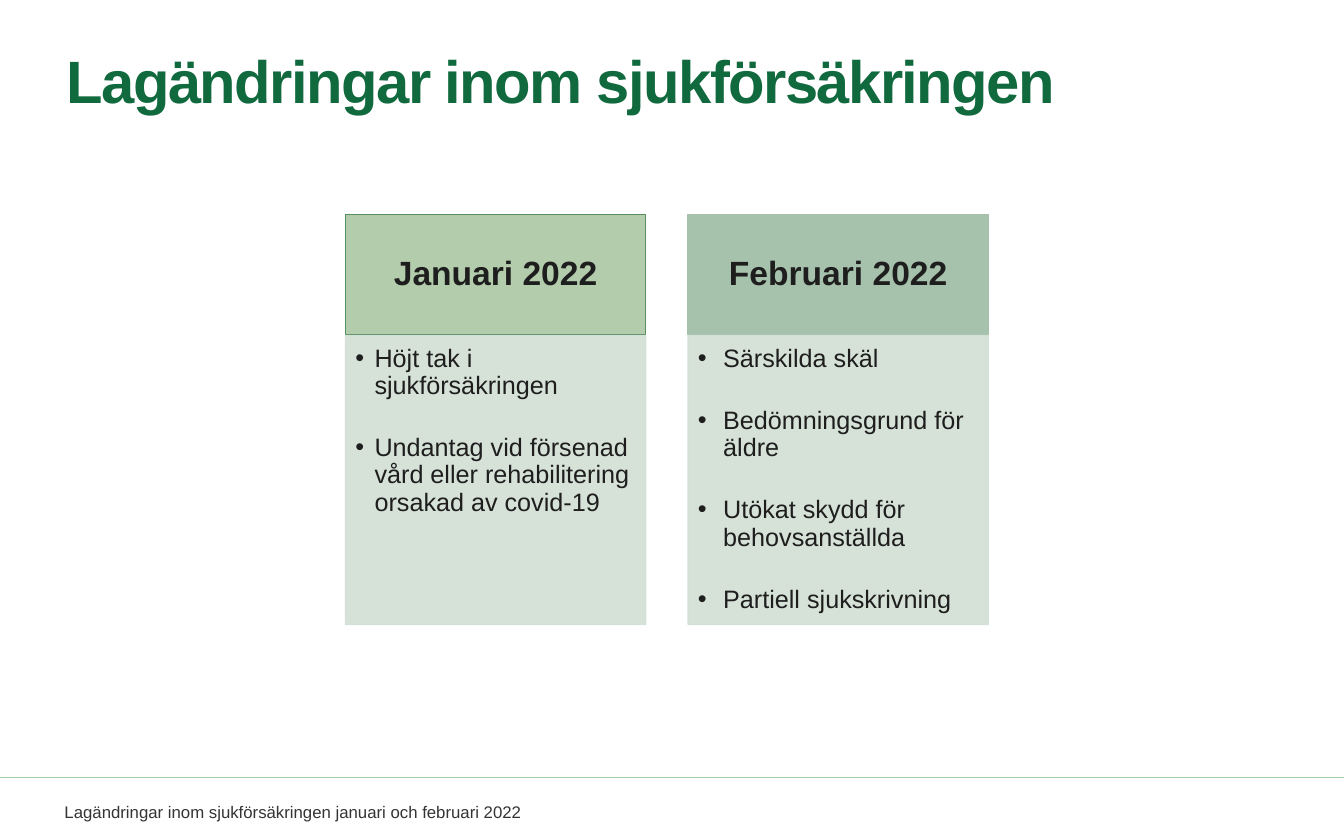
from lxml import etree
from pptx import Presentation
from pptx.dml.color import RGBColor
from pptx.enum.shapes import MSO_CONNECTOR, MSO_SHAPE
from pptx.enum.text import MSO_ANCHOR, MSO_AUTO_SIZE, PP_ALIGN
from pptx.oxml.ns import qn
from pptx.util import Inches, Pt

RECT = MSO_SHAPE.RECTANGLE
LINE = MSO_CONNECTOR.STRAIGHT
TOP, MID = MSO_ANCHOR.TOP, MSO_ANCHOR.MIDDLE
LEFT, CENTER = PP_ALIGN.LEFT, PP_ALIGN.CENTER
FIXED = MSO_AUTO_SIZE.NONE

WIDE, HIGH = 13.34, 8.34
INK, PALE = "1E1E1E", "D2DFD4"
START, STEP, SPAN = 25.71, 25.49, 22.34
HEAD_TOP, HEAD_HIGH = 25.54, 14.27
BODY_TOP, BODY_HIGH = 39.93, 34.41
MONTHS = [
    ("Januari 2022", "B3CCAC", "568F62", 0.19, [
        "Höjt tak i sjukförsäkringen",
        "Undantag vid försenad vård eller rehabilitering orsakad av covid-19",
    ]),
    ("Februari 2022", "A7C2AC", "A7C2AC", 0.25, [
        "Särskilda skäl",
        "Bedömningsgrund för äldre",
        "Utökat skydd för behovsanställda",
        "Partiell sjukskrivning",
    ]),
]


def col(share):
    """Turn a percentage of the slide width into a length."""
    return Inches(WIDE * share / 100)


def row(share):
    """Turn a percentage of the slide height into a length."""
    return Inches(HIGH * share / 100)


def area(left, top, wide, high):
    """Turn four percentages into a place and a size."""
    return col(left), row(top), col(wide), row(high)


def tint(code):
    """Turn a hex string into a colour."""
    return RGBColor.from_string(code)


def frame(shape, pads, anchor):
    """Set the margins and anchor of a shape's text frame."""
    text = shape.text_frame
    text.word_wrap = True
    text.auto_size = FIXED
    text.vertical_anchor = anchor
    text.margin_left, text.margin_top, text.margin_right, text.margin_bottom = map(Inches, pads)
    return text


def write(para, words, size, code, bold=False, align=LEFT, lead=0.9):
    """Add one formatted run to a paragraph."""
    para.alignment = align
    para.line_spacing = lead
    run = para.add_run()
    run.text = words
    font = run.font
    font.name, font.size, font.bold = "Arial", Pt(size), bold
    font.color.rgb = tint(code)
    return run


def bullet(para, inset):
    """Give a paragraph a hanging round bullet."""
    props = para._p.get_or_add_pPr()
    props.set("marL", str(Inches(inset)))
    props.set("indent", str(-Inches(inset)))
    etree.SubElement(props, qn("a:buFont")).set("typeface", "Arial")
    etree.SubElement(props, qn("a:buChar")).set("char", "•")


def block(slide, place, fill, edge, alpha=100):
    """Draw a filled rectangle with a thin edge."""
    shape = slide.shapes.add_shape(RECT, *place)
    shape.shadow.inherit = False
    shape.fill.solid()
    shape.fill.fore_color.rgb = tint(fill)
    shape.line.color.rgb = tint(edge)
    shape.line.width = Pt(0.85)
    if alpha < 100:
        for node in shape._element.spPr.iter(qn("a:srgbClr")):
            etree.SubElement(node, qn("a:alpha")).set("val", str(alpha * 1000))
    return shape


def month(slide, left, name, fill, edge, inset, items):
    """Draw a month heading above its bullet list."""
    head = block(slide, area(left, HEAD_TOP, SPAN, HEAD_HIGH), fill, edge)
    text = frame(head, (0.19, 0.11, 0.19, 0.11), MID)
    write(text.paragraphs[0], name, 24, INK, True, CENTER)
    body = block(slide, area(left, BODY_TOP, SPAN, BODY_HIGH), PALE, PALE, 90)
    text = frame(body, (0.1, 0.1, 0.14, 0.16), TOP)
    for i, item in enumerate(items):
        para = text.add_paragraph() if i else text.paragraphs[0]
        write(para, item, 18, INK)
        para.space_before = Pt(25 if i else 0)
        bullet(para, inset)


def title(slide, words):
    """Place and fill the title."""
    shape = slide.shapes.title
    shape.left, shape.top, shape.width, shape.height = area(4.95, 1.68, 89.28, 16.67)
    text = frame(shape, (0, 0, 0, 0), MID)
    run = write(text.paragraphs[0], words, 42.7, "11693E", True)
    run._r.get_or_add_rPr().set("spc", "-110")


def footer(slide, words):
    """Draw the footer rule and its text."""
    rule = slide.shapes.add_connector(LINE, 0, row(92.57), col(100), row(92.57))
    rule.line.color.rgb = tint("A6D0AB")
    rule.line.width = Pt(1)
    etree.SubElement(rule._element.spPr, qn("a:effectLst"))
    box = slide.shapes.add_textbox(*area(4.8, 95.44, 40, 2.4))
    text = frame(box, (0, 0, 0, 0), TOP)
    write(text.paragraphs[0], words, 12, "343434", lead=1.0)


def main():
    """Build and save the slide."""
    deck = Presentation()
    deck.slide_width, deck.slide_height = Inches(WIDE), Inches(HIGH)
    slide = deck.slides.add_slide(deck.slide_layouts[5])
    footer(slide, "Lagändringar inom sjukförsäkringen januari och februari 2022")
    title(slide, "Lagändringar inom sjukförsäkringen")
    for i, facts in enumerate(MONTHS):
        month(slide, START + i * STEP, *facts)
    deck.save("out.pptx")


if __name__ == "__main__":
    main()
